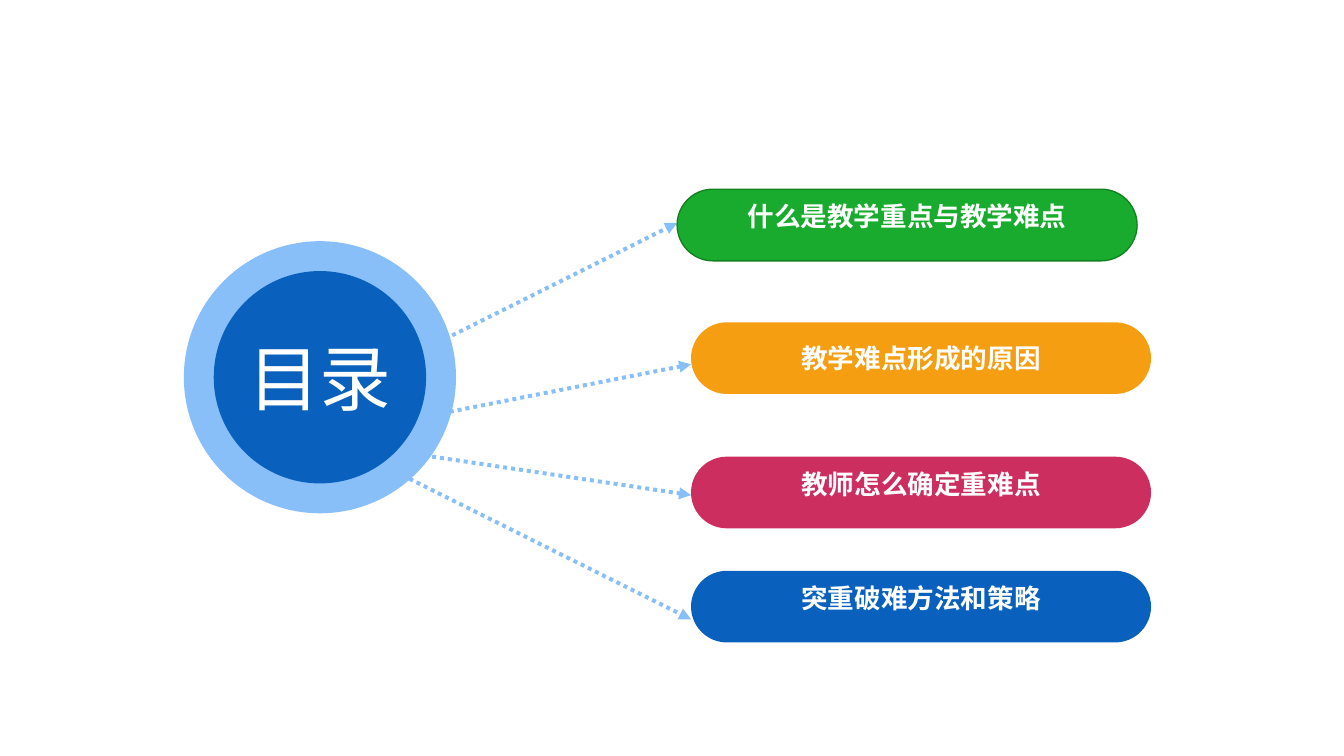
from dataclasses import dataclass

from lxml import etree
from pptx import Presentation
from pptx import util as u
from pptx.dml.color import RGBColor
from pptx.enum import dml, shapes, text
from pptx.oxml.ns import qn


@dataclass(frozen=True)
class Theme:
    blue: str = "0961BD"
    sky: str = "88BFF9"
    green: str = "18AB2D"
    green_edge: str = "127F21"
    orange: str = "F69E12"
    pink: str = "CC2E5F"
    white: str = "FFFFFF"
    font: str = "Arial"
    cjk_font: str = "Noto Sans CJK SC"
    title_size: float = 54
    item_size: float = 20
    dot_width: float = 3


class Deck:
    """Draws styled elements on the current slide, with lengths in points."""

    def __init__(self, prs, theme):
        self.theme = theme
        self.s = prs.slides.add_slide(prs.slide_layouts[5])

    def label(self, sp, words, size, bold=False, font=None, lift=0):
        tf = sp.text_frame
        tf.text = words
        tf.word_wrap = True
        tf.auto_size = text.MSO_AUTO_SIZE.NONE
        tf.vertical_anchor = text.MSO_ANCHOR.MIDDLE
        tf.margin_left = tf.margin_right = tf.margin_top = 0
        tf.margin_bottom = u.Pt(2 * lift)
        p = tf.paragraphs[0]
        p.alignment = text.PP_ALIGN.CENTER
        p.font.name = font or self.theme.font
        p.font.size = u.Pt(size)
        p.font.bold = bold
        p.font.color.rgb = RGBColor.from_string(self.theme.white)

    def shape(self, kind, x, y, w, h, fill, edge=None):
        sp = self.s.shapes.add_shape(kind, u.Pt(x), u.Pt(y), u.Pt(w), u.Pt(h))
        sp.shadow.inherit = False
        sp.fill.solid()
        sp.fill.fore_color.rgb = RGBColor.from_string(fill)
        if edge:
            sp.line.color.rgb = RGBColor.from_string(edge)
            sp.line.width = u.Pt(1)
        else:
            sp.line.fill.background()
        return sp

    def disc(self, cx, cy, d, fill):
        return self.shape(shapes.MSO_SHAPE.OVAL, cx - d / 2, cy - d / 2, d, d, fill)

    def title(self, words, cx, cy, d):
        sp = self.s.shapes.title
        sp.left, sp.top = u.Pt(cx - d / 2), u.Pt(cy - d / 2)
        sp.width = sp.height = u.Pt(d)
        self.label(sp, words, self.theme.title_size)
        tree = sp.element.getparent()
        tree.append(sp.element)

    def pill(self, words, x, y, w, h, fill, edge, font, lift):
        sp = self.shape(shapes.MSO_SHAPE.ROUNDED_RECTANGLE, x, y, w, h, fill, edge)
        sp.adjustments[0] = 0.5
        self.label(sp, words, self.theme.item_size, True, font, lift)

    def arrow(self, x1, y1, x2, y2):
        ends = [u.Pt(v) for v in (x1, y1, x2, y2)]
        cn = self.s.shapes.add_connector(shapes.MSO_CONNECTOR.STRAIGHT, *ends)
        cn.line.color.rgb = RGBColor.from_string(self.theme.sky)
        cn.line.width = u.Pt(self.theme.dot_width)
        cn.line.dash_style = dml.MSO_LINE.ROUND_DOT
        sp_pr = cn.element.find(qn("p:spPr"))
        etree.SubElement(sp_pr.find(qn("a:ln")), qn("a:tailEnd"), type="triangle")
        etree.SubElement(sp_pr, qn("a:effectLst"))


def main():
    prs = Presentation()
    prs.slide_width, prs.slide_height = u.Inches(14.06), u.Inches(7.91)
    t = Theme()
    deck = Deck(prs, t)

    arrows = [
        (303, 271.5, 510, 168),
        (327, 312.5, 520.5, 274.5),
        (325.5, 344, 520.5, 373),
        (303, 358, 520.5, 466.5),
    ]
    for ends in arrows:
        deck.arrow(*ends)

    hub = (241, 284.2)
    deck.disc(*hub, 205, t.sky)
    deck.disc(*hub, 160, t.blue)
    deck.title("目录", *hub, 160)

    items = [
        ("什么是教学重点与教学难点", 510, 142.5, t.green, t.green_edge, t.font, 6.5),
        ("教学难点形成的原因", 520.5, 242.8, t.orange, None, t.cjk_font, 0),
        ("教师怎么确定重难点", 520.5, 344, t.pink, None, t.font, 6.5),
        ("突重破难方法和策略", 520.5, 430, t.blue, None, t.font, 6.5),
    ]
    for words, x, y, fill, edge, font, lift in items:
        deck.pill(words, x, y, 346.5, 54, fill, edge, font, lift)

    prs.save("out.pptx")


if __name__ == "__main__":
    main()
